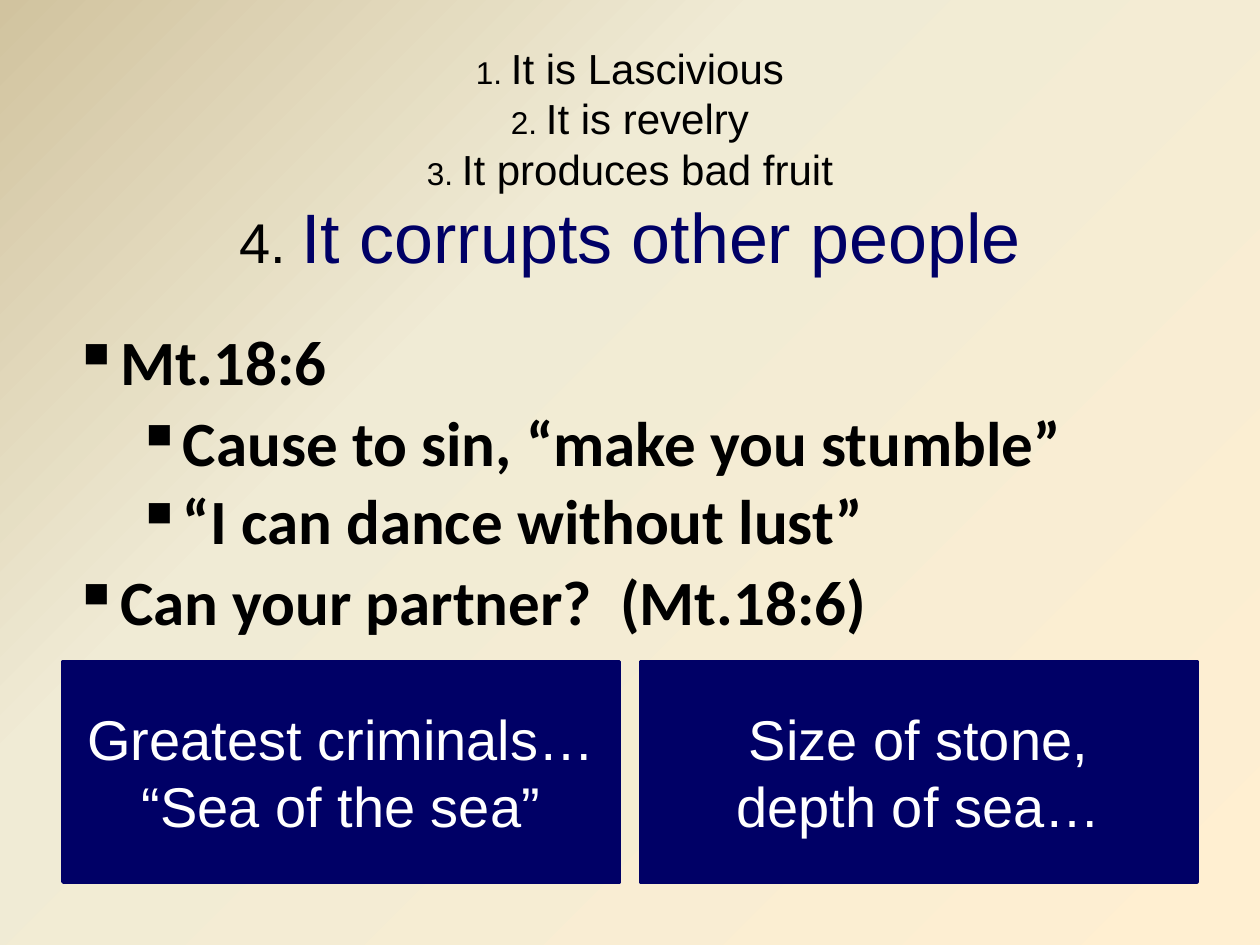
from copy import deepcopy
from dataclasses import dataclass

from lxml.etree import SubElement
from pptx import Presentation
from pptx.dml.color import RGBColor as Color
from pptx.enum.shapes import MSO_SHAPE as Shape
from pptx.enum.text import MSO_ANCHOR as Anchor, PP_ALIGN as Align
from pptx.oxml.ns import qn
from pptx.util import Pt


@dataclass(frozen=True)
class Theme:
    navy: Color = Color.from_string("000066")
    black: Color = Color.from_string("000000")
    white: Color = Color.from_string("FFFFFF")
    backdrop: tuple = ((0, "D1C39F"), (0.35, "F0EBD5"), (1, "FFEFD1"))
    heading: str = "Arial"
    body: str = "Calibri"
    number_size: int = 18
    past_size: int = 24
    panel_size: int = 32
    bullet_size: int = 36
    point_size: int = 40


theme = Theme()


def set_font(font, name=None, size=None, color=None, bold=None):
    if name:
        font.name = name
    if size:
        font.size = Pt(size)
    if color is not None:
        font.color.rgb = color
    if bold is not None:
        font.bold = bold


def add_text_box(page, left, top, width, height):
    frame = page.shapes.add_textbox(Pt(left), Pt(top), Pt(width), Pt(height)).text_frame
    frame.word_wrap = True
    return frame


deck = Presentation()
deck.slide_width, deck.slide_height = Pt(720), Pt(540)
page = deck.slides.add_slide(deck.slide_layouts[6])

# Diagonal three-colour background
fill = page.background.fill
fill.gradient()
fill.gradient_angle = 315
stop_list = page._element.find(".//" + qn("a:gsLst"))
stop_list.append(deepcopy(stop_list[0]))
for stop, (position, color) in zip(fill.gradient_stops, theme.backdrop):
    stop.position = position
    stop.color.rgb = Color.from_string(color)

# Title: three earlier points, then the current one
points = ["It is Lascivious", "It is revelry", "It produces bad fruit",
          "It corrupts other people"]
frame = add_text_box(page, 36, 12.24, 648, 158.4)
frame.vertical_anchor = Anchor.MIDDLE
para = frame.paragraphs[0]
para.alignment = Align.CENTER
set_font(para.font, theme.heading)
for number, point in enumerate(points, 1):
    current = number == len(points)
    if number > 1:
        para.add_line_break()
    for text, size, color in (
        (f"{number}. ", theme.panel_size if current else theme.number_size, theme.black),
        (point, theme.point_size if current else theme.past_size,
         theme.navy if current else theme.black),
    ):
        span = para.add_run()
        span.text = text
        set_font(span.font, size=size, color=color)

# Bulleted body: text, level, space before
bullets = [
    ("Mt.18:6", 0, 7.2),
    ("Cause to sin, “make you stumble”", 1, 7.2),
    ("“I can dance without lust”", 1, 6),
    ("Can your partner?  (Mt.18:6)", 0, 7.2),
]
indents = [(27, -27), (58.5, -22.5)]  # left margin and hanging indent per level
frame = add_text_box(page, 34.56, 185.76, 648, 318.24)
for index, (text, level, space) in enumerate(bullets):
    para = frame.add_paragraph() if index else frame.paragraphs[0]
    para.text = text
    para.level = level
    para.line_spacing = 0.9
    para.space_before = Pt(space)
    margin, hanging = indents[level]
    props = para._p.get_or_add_pPr()
    props.set("marL", str(Pt(margin)))
    props.set("indent", str(Pt(hanging)))
    SubElement(props, qn("a:buChar")).set("char", "▪")
    set_font(para.font, theme.body, theme.bullet_size, theme.black, True)

# Two panels along the bottom; a vertical tab is a line break
panels = ["Greatest criminals…\n“Sea of the sea”", "Size of stone,\vdepth of sea…"]
panel_width, panel_gap = 318, 12
for index, text in enumerate(panels):
    left = 36 + index * (panel_width + panel_gap)
    box = page.shapes.add_shape(Shape.RECTANGLE, Pt(left), Pt(378), Pt(panel_width), Pt(126))
    box.shadow.inherit = False
    box.fill.solid()
    box.fill.fore_color.rgb = theme.navy
    box.line.color.rgb = theme.navy
    box.line.width = Pt(2)
    frame = box.text_frame
    frame.word_wrap = True
    frame.vertical_anchor = Anchor.MIDDLE
    frame.text = text
    for para in frame.paragraphs:
        para.alignment = Align.CENTER
        set_font(para.font, theme.heading, theme.panel_size, theme.white)

deck.save("out.pptx")
